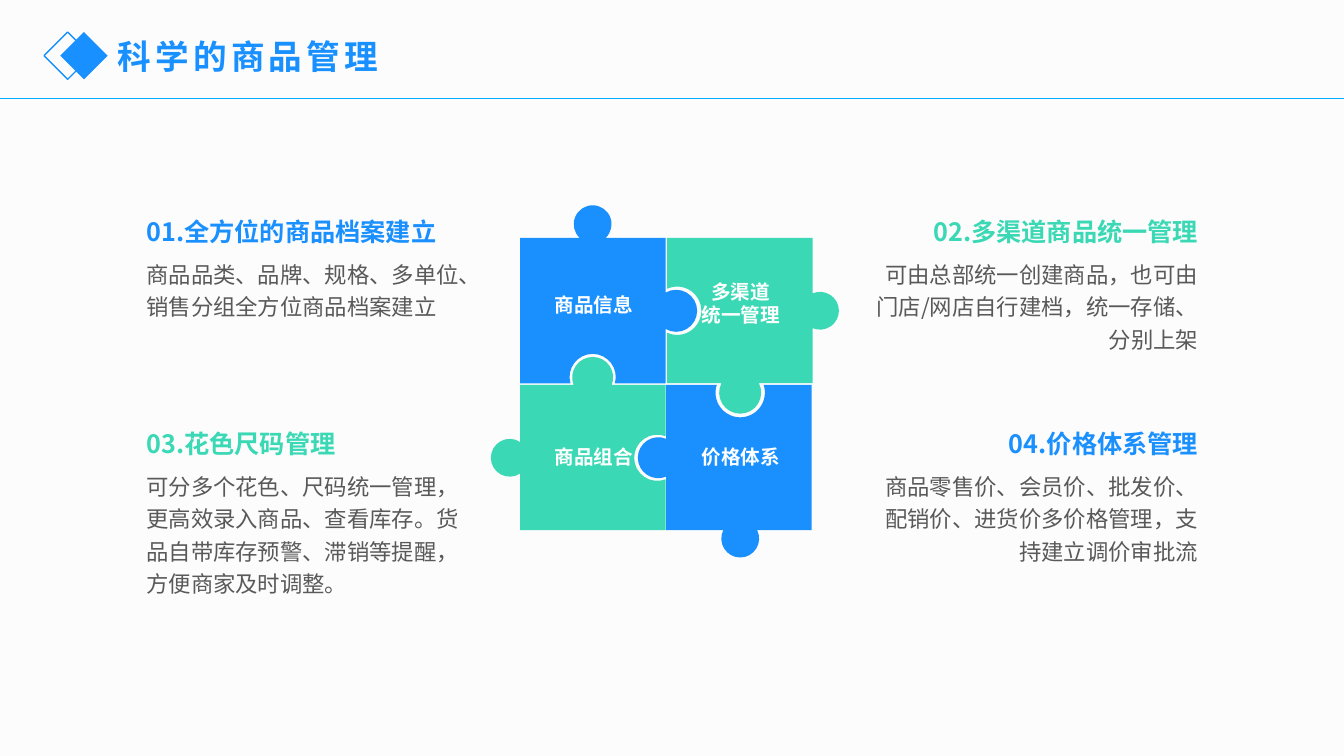
import math
from lxml import etree
from pptx import Presentation
from pptx.dml.color import RGBColor
from pptx.enum import shapes, text
from pptx.oxml import ns
from pptx.util import Pt

PX = 4762.5
FONT = "Noto Sans CJK SC"
BACKGROUND = RGBColor(0xFC, 0xFC, 0xFC)
TITLE_BLUE = RGBColor(0x18, 0x90, 0xFF)
RULE_BLUE = RGBColor(0x00, 0xAD, 0xFF)
BLUE = RGBColor(0x1A, 0x90, 0xFF)
GREEN = RGBColor(0x3A, 0xD8, 0xB4)
GREY = RGBColor(0x59, 0x59, 0x59)
WHITE = RGBColor(0xFF, 0xFF, 0xFF)
LEFT, CENTER, RIGHT = text.PP_ALIGN.LEFT, text.PP_ALIGN.CENTER, text.PP_ALIGN.RIGHT
PAGE_WIDTH, PAGE_HEIGHT = 2560, 1440
PIECE_SIZE = 277
ARC_PARTS = 4

# top, right, bottom, left circle of each piece: x, y, radius
PIECES = [
    (1269, 733, BLUE, [(1410, 748, 47), None, (1410, 1026, 36), (1254, 872, 39)]),
    (991, 733, GREEN, [(1129, 719, 39), (1252, 872, 44), None, (971, 872, 36)]),
    (991, 453, BLUE, [(1129, 427, 36), (1288, 592, 40), (1129, 718, 44), None]),
    (1271, 453, GREEN, [None, (1562, 592, 36), (1410, 748, 40), (1290, 592, 46)]),
]
LABELS = [
    (1012, 549, 65, ["商品信息"]),
    (1012, 838, 65, ["商品组合"]),
    (1292, 523, 109, ["多渠道", "统一管理"]),
    (1292, 838, 65, ["价格体系"]),
]
TOPICS = [
    (260, 402, 657, LEFT, BLUE, "01.全方位的商品档案建立",
     "商品品类、品牌、规格、多单位、销售分组全方位商品档案建立", 134),
    (260, 806, 657, LEFT, GREEN, "03.花色尺码管理",
     "可分多个花色、尺码统一管理，更高效录入商品、查看库存。货品自带库存预警、滞销等提醒，方便商家及时调整。", 259),
    (1632, 402, 669, RIGHT, GREEN, "02.多渠道商品统一管理",
     "可由总部统一创建商品，也可由门店/网店自行建档，统一存储、分别上架", 198),
    (1632, 806, 669, RIGHT, BLUE, "04.价格体系管理",
     "商品零售价、会员价、批发价、配销价、进货价多价格管理，支持建立调价审批流", 198),
]


def emu(*lengths):
    return [round(length * PX) for length in lengths]


def format_para(para, size, color, align, bold):
    para.alignment = align
    font = para.font
    font.size = Pt(size)
    font.bold = bold
    font.color.rgb = color
    font.name = FONT
    properties = para._p.pPr.find(ns.qn("a:defRPr"))
    etree.SubElement(properties, ns.qn("a:ea"), typeface=FONT)
    return properties


def add_text(page, x, y, width, height, lines, size, color, align, bold=True, spacing=None):
    box = page.shapes.add_textbox(*emu(x, y, width, height))
    frame = box.text_frame
    frame.word_wrap = True
    frame.auto_size = text.MSO_AUTO_SIZE.SHAPE_TO_FIT_TEXT
    frame.text = "\n".join(lines)
    for para in frame.paragraphs:
        if spacing:
            para.line_spacing = spacing
        format_para(para, size, color, align, bold)


def add_title(page, words):
    title = page.shapes.title
    title.left, title.top, title.width, title.height = emu(205, 58, 1152, 96)
    frame = title.text_frame
    frame.text = words
    frame.word_wrap = True
    frame.auto_size = text.MSO_AUTO_SIZE.SHAPE_TO_FIT_TEXT
    frame.vertical_anchor = text.MSO_ANCHOR.TOP
    properties = format_para(frame.paragraphs[0], 24, TITLE_BLUE, LEFT, True)
    properties.set("spc", "300")


def add_rule(page, y):
    rule = page.shapes.add_connector(
        shapes.MSO_CONNECTOR.STRAIGHT, *emu(0, y, PAGE_WIDTH, y))
    rule.line.color.rgb = RULE_BLUE
    rule.line.width = Pt(1)
    etree.SubElement(rule._element.spPr, ns.qn("a:effectLst"))


def add_diamond(page, x, filled):
    diamond = page.shapes.add_shape(shapes.MSO_SHAPE.DIAMOND, *emu(x, 61, 90, 90))
    diamond.shadow.inherit = False
    if filled:
        diamond.fill.solid()
        diamond.fill.fore_color.rgb = TITLE_BLUE
        diamond.line.fill.background()
    else:
        diamond.fill.background()
        diamond.line.color.rgb = TITLE_BLUE
        diamond.line.width = Pt(1)


def arc_nodes(corner, direction, circle):
    x, y, radius = circle
    along_x, along_y = direction
    out_x, out_y = along_y, -along_x
    offset = (x - corner[0]) * out_x + (y - corner[1]) * out_y
    side = math.copysign(1, offset)
    reach = math.pi - math.acos(abs(offset) / radius)
    sweep = 2 * reach / ARC_PARTS
    pull = 4 / 3 * math.tan(sweep / 4)

    def spot(angle, lean=0):
        along = radius * (math.sin(angle) + lean * math.cos(angle))
        away = radius * (math.cos(angle) - lean * math.sin(angle)) * side
        return emu(x + along * along_x + away * out_x, y + along * along_y + away * out_y)

    yield spot(-reach), None
    for part in range(ARC_PARTS):
        start = part * sweep - reach
        end = start + sweep
        yield spot(end), (spot(start, pull), spot(end, -pull))


def bend_segments(piece, nodes):
    segments = list(piece._element.iter(ns.qn("a:lnTo")))
    for segment, (end, handles) in zip(segments, nodes):
        if handles:
            segment.tag = ns.qn("a:cubicBezTo")
            for index, (x, y) in enumerate(handles):
                point = etree.Element(
                    ns.qn("a:pt"), x=str(x - piece.left), y=str(y - piece.top))
                segment.insert(index, point)


def add_piece(page, x, y, color, circles):
    corner = (x, y)
    nodes = []
    for direction, circle in zip([(1, 0), (0, 1), (-1, 0), (0, -1)], circles):
        nodes.append((emu(*corner), None))
        if circle:
            nodes.extend(arc_nodes(corner, direction, circle))
        corner = tuple(c + PIECE_SIZE * d for c, d in zip(corner, direction))
    builder = page.shapes.build_freeform(*nodes[0][0])
    builder.add_line_segments([end for end, handles in nodes[1:]], close=True)
    piece = builder.convert_to_shape()
    bend_segments(piece, nodes[1:])
    piece.shadow.inherit = False
    piece.fill.solid()
    piece.fill.fore_color.rgb = color
    piece.line.fill.background()


def add_topic(page, x, y, width, align, color, heading, body, body_height):
    add_text(page, x, y, width, 77, [heading], 18, color, align)
    add_text(page, x, y + 76, width, body_height, [body], 16, GREY, align, False, 1.2)


def main():
    deck = Presentation()
    deck.slide_width, deck.slide_height = emu(PAGE_WIDTH, PAGE_HEIGHT)
    page = deck.slides.add_slide(deck.slide_layouts[5])
    page.background.fill.solid()
    page.background.fill.fore_color.rgb = BACKGROUND
    add_rule(page, 188)
    add_diamond(page, 84, False)
    add_diamond(page, 115, True)
    add_title(page, "科学的商品管理")
    for piece in PIECES:
        add_piece(page, *piece)
    for x, y, height, lines in LABELS:
        add_text(page, x, y, 238, height, lines, 14, WHITE, CENTER)
    for topic in TOPICS:
        add_topic(page, *topic)
    deck.save("out.pptx")


if __name__ == "__main__":
    main()
